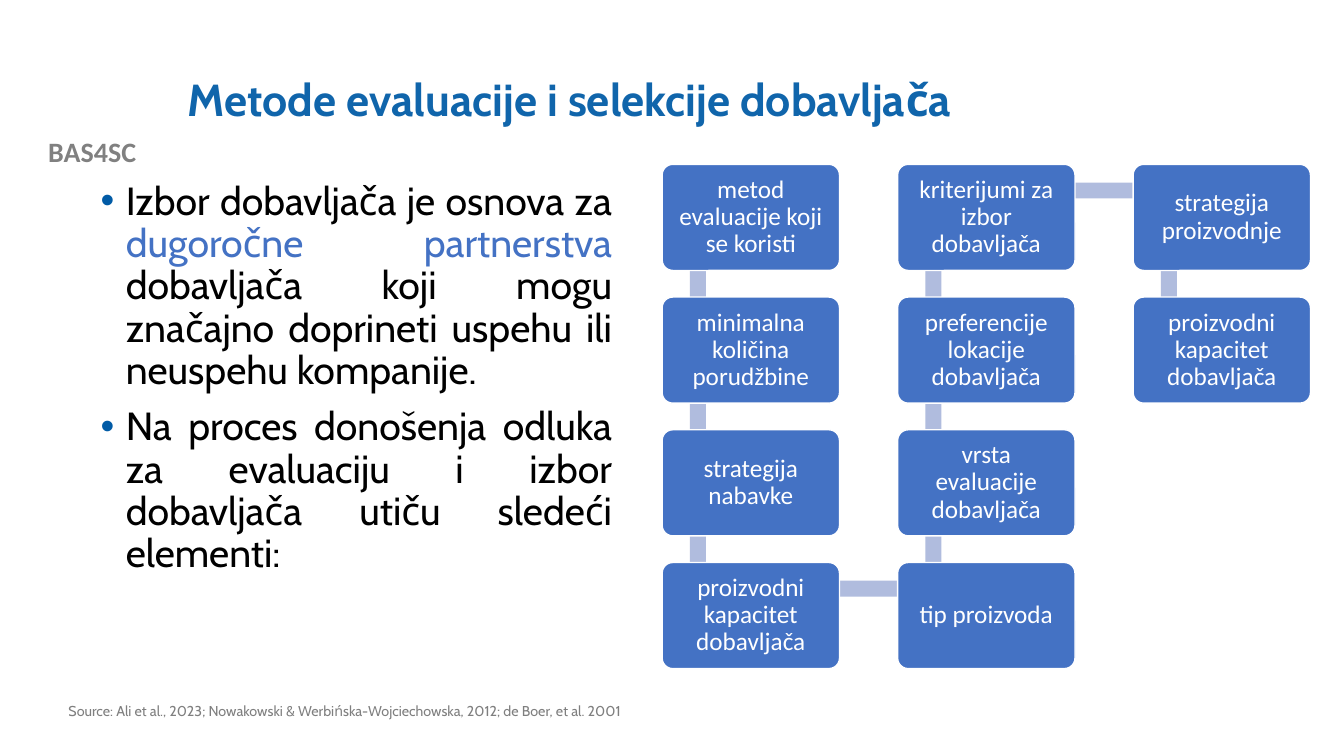
"""Build the slide on supplier evaluation and selection methods."""
from dataclasses import dataclass
from itertools import pairwise

from lxml.etree import SubElement
from pptx import Presentation
from pptx.dml.color import RGBColor as RGB
from pptx.enum.shapes import MSO_SHAPE as SHAPE
from pptx.enum.text import MSO_ANCHOR as ANCHOR, PP_ALIGN as ALIGN
from pptx.oxml.ns import qn
from pptx.slide import Slide
from pptx.text.text import TextFrame, _Paragraph as Para, _Run as Run
from pptx.util import Pt

COLORS = {
    "title": "1065AB", "bullet": "015BA6", "accent": "4472C4", "bar": "B0BCDE",
    "white": "FFFFFF", "black": "000000", "label": "808080", "source": "7F7F7F",
}
GRID_LEFT, GRID_TOP = 473, 117.4
COL_STEP, ROW_STEP = 168.2, 94.8
BOX_W, BOX_H = 126.7, 75.8
BAR = 11.4


@dataclass
class Step:
    """A box of the winding process and its grid cell."""
    text: str
    col: int
    row: int

    @property
    def left(self) -> float:
        """Return the left edge in points."""
        return GRID_LEFT + self.col * COL_STEP

    @property
    def top(self) -> float:
        """Return the top edge in points."""
        return GRID_TOP + self.row * ROW_STEP


STEPS = [
    Step("metod evaluacije koji se koristi", 0, 0),
    Step("minimalna količina porudžbine", 0, 1),
    Step("strategija nabavke", 0, 2),
    Step("proizvodni kapacitet dobavljača", 0, 3),
    Step("tip proizvoda", 1, 3),
    Step("vrsta evaluacije dobavljača", 1, 2),
    Step("preferencije lokacije dobavljača", 1, 1),
    Step("kriterijumi za izbor dobavljača", 1, 0),
    Step("strategija proizvodnje", 2, 0),
    Step("proizvodni kapacitet dobavljača", 2, 1),
]
BULLETS = [
    [("Izbor dobavljača je osnova za ", "black"),
     ("dugoročne partnerstva ", "accent"),
     ("dobavljača koji mogu značajno doprineti uspehu ili neuspehu kompanije.", "black")],
    [("Na proces donošenja odluka za evaluaciju i izbor dobavljača utiču sledeći elementi:",
      "black")],
]


def style(r: Run, size: float, color: str, font: str = "Cabin", bold: bool = False) -> None:
    """Format a run."""
    r.font.name, r.font.size, r.font.bold = font, Pt(size), bold
    r.font.color.rgb = RGB.from_string(COLORS[color])


def add_text(s: Slide, left: float, top: float, width: float, height: float) -> TextFrame:
    """Add a wrapping text box and return its frame."""
    tf = s.shapes.add_textbox(Pt(left), Pt(top), Pt(width), Pt(height)).text_frame
    tf.word_wrap = True
    return tf


def add_bullet(p: Para) -> None:
    """Give a paragraph a hanging coloured bullet."""
    ppr = p._p.get_or_add_pPr()
    ppr.set("marL", str(Pt(18)))
    ppr.set("indent", str(-Pt(18)))
    SubElement(SubElement(ppr, qn("a:buClr")), qn("a:srgbClr"), val=COLORS["bullet"])
    SubElement(ppr, qn("a:buFont"), typeface="Arial")
    SubElement(ppr, qn("a:buChar"), char="•")


def add_bar(s: Slide, a: Step, b: Step) -> None:
    """Add the bar that joins two neighbouring steps."""
    left, top = min(a.left, b.left), min(a.top, b.top)
    if a.col == b.col:
        box = left + 19.9, top + 19.1, BAR, ROW_STEP
    else:
        box = left + 25.9, top + 13, COL_STEP, BAR
    sp = s.shapes.add_shape(SHAPE.RECTANGLE, *map(Pt, box))
    sp.shadow.inherit = False
    sp.fill.solid()
    sp.fill.fore_color.rgb = RGB.from_string(COLORS["bar"])
    sp.line.fill.background()


def add_step(s: Slide, step: Step) -> None:
    """Add a rounded step box with its text."""
    sp = s.shapes.add_shape(SHAPE.ROUNDED_RECTANGLE, Pt(step.left), Pt(step.top),
                            Pt(BOX_W), Pt(BOX_H))
    sp.adjustments[0] = 0.1
    sp.shadow.inherit = False
    sp.fill.solid()
    sp.fill.fore_color.rgb = RGB.from_string(COLORS["accent"])
    sp.line.color.rgb = RGB.from_string(COLORS["white"])
    sp.line.width = Pt(1)
    tf = sp.text_frame
    tf.text = step.text
    tf.word_wrap = True
    tf.vertical_anchor = ANCHOR.MIDDLE
    tf.margin_left = tf.margin_right = tf.margin_top = tf.margin_bottom = Pt(7)
    p = tf.paragraphs[0]
    p.alignment, p.line_spacing = ALIGN.CENTER, 0.9
    style(p.runs[0], 18, "white", "Calibri")


def add_title(s: Slide) -> None:
    """Place and format the title."""
    sp = s.shapes.title
    sp.left, sp.top, sp.width, sp.height = map(Pt, (126.7, 28.8, 767.5, 87.8))
    tf = sp.text_frame
    tf.text = "Metode evaluacije i selekcije dobavljača"
    tf.vertical_anchor = ANCHOR.MIDDLE
    p = tf.paragraphs[0]
    p.alignment, p.line_spacing = ALIGN.LEFT, 0.9
    style(p.runs[0], 32, "title", bold=True)


def add_body(s: Slide) -> None:
    """Add the justified bullet list."""
    tf = add_text(s, 64.8, 126, 379.4, 342.7)
    for i, parts in enumerate(BULLETS):
        p = tf.add_paragraph() if i else tf.paragraphs[0]
        add_bullet(p)
        p.alignment, p.line_spacing = ALIGN.JUSTIFY, 0.9
        if i:
            p.space_before = Pt(10)
        for text, color in parts:
            r = p.add_run()
            r.text = text
            style(r, 28, color)


def main() -> None:
    """Build and save the presentation."""
    prs = Presentation()
    prs.slide_width, prs.slide_height = Pt(960), Pt(540)
    s = prs.slides.add_slide(prs.slide_layouts[5])
    add_title(s)

    tf = add_text(s, 0, 92.2, 131.8, 31.7)
    tf.text = "BAS4SC"
    tf.paragraphs[0].alignment = ALIGN.CENTER
    style(tf.paragraphs[0].runs[0], 20, "label", "Calibri", True)

    add_body(s)

    tf = add_text(s, 41.8, 501.1, 424.8, 25.2)
    tf.text = ("Source: Ali et al., 2023; Nowakowski & Werbińska-Wojciechowska, 2012; "
               "de Boer, et al. 2001")
    tf.paragraphs[0].line_spacing = 0.7
    style(tf.paragraphs[0].runs[0], 10.2, "source")

    for a, b in pairwise(STEPS):
        add_bar(s, a, b)
    for step in STEPS:
        add_step(s, step)
    prs.save("out.pptx")


if __name__ == "__main__":
    main()
